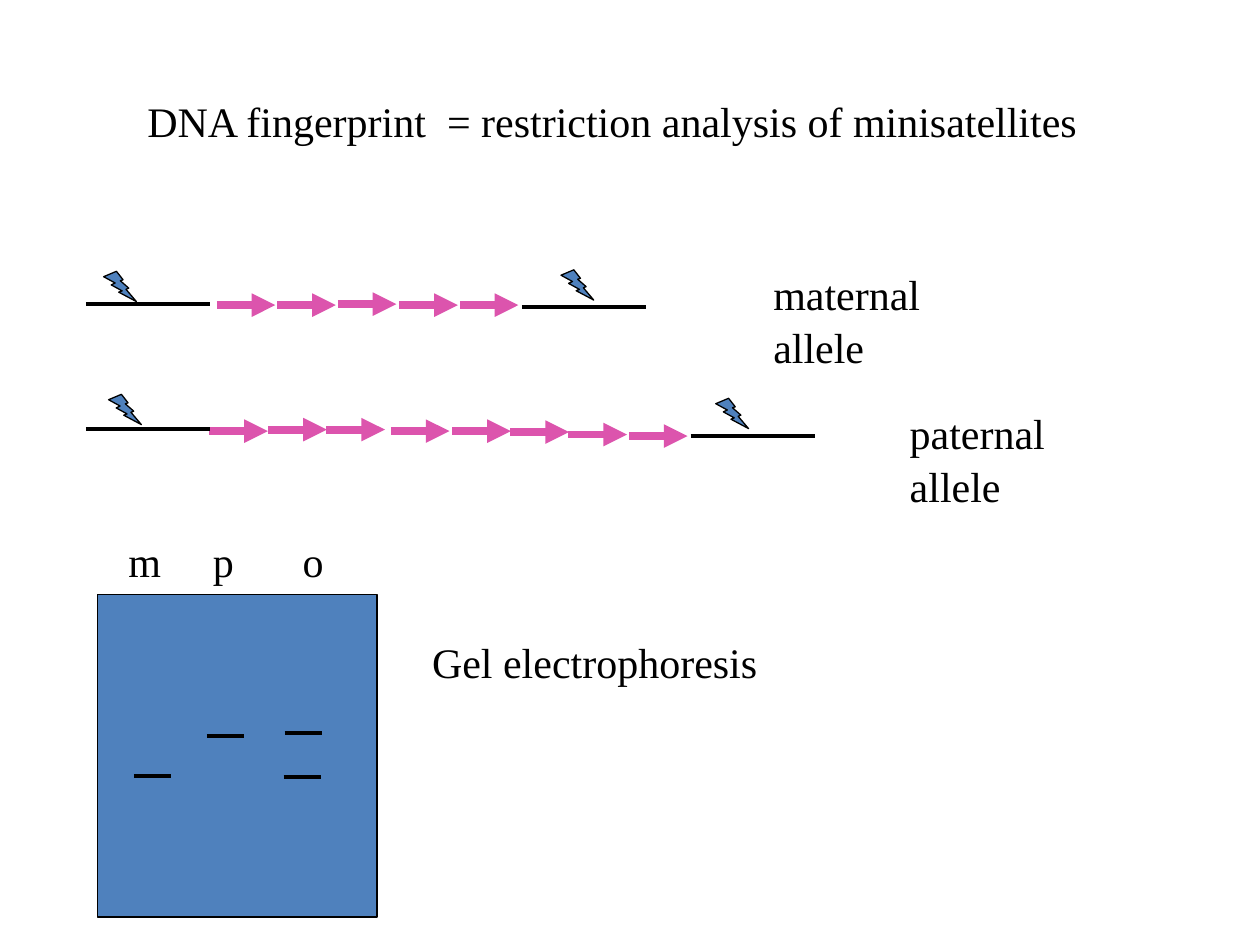
from dataclasses import dataclass

from lxml import etree
from pptx import Presentation
from pptx import util as u
from pptx.dml.color import RGBColor
from pptx.enum import shapes, text
from pptx.oxml.ns import qn


@dataclass(frozen=True)
class Theme:
    """Colours, font, type size and line widths of the slide."""
    ink: RGBColor = RGBColor(0x00, 0x00, 0x00)
    blue: RGBColor = RGBColor(0x4F, 0x81, 0xBD)
    pink: RGBColor = RGBColor(0xDC, 0x54, 0xAD)
    font: str = "Times New Roman"
    size: float = 24
    outline: float = 0.75
    strand: float = 2.25
    arrow: float = 4.5


THEME = Theme()


def add_label(page, words, left, top, width, right_margin=None):
    """Add a text box; a right margin makes its words wrap."""
    box = page.shapes.add_textbox(u.Cm(left), u.Cm(top), u.Cm(width), u.Cm(1.27))
    frame = box.text_frame
    frame.word_wrap = right_margin is not None
    if right_margin is not None:
        frame.margin_right = u.Cm(right_margin)
    frame.vertical_anchor = text.MSO_ANCHOR.TOP
    para = frame.paragraphs[0]
    para.line_spacing = 1.05
    span = para.add_run()
    span.text = words
    span.font.name = THEME.font
    span.font.size = u.Pt(THEME.size)
    span.font.color.rgb = THEME.ink


def add_line(page, left, top, length, color, width):
    """Add a horizontal line without shadow and return it."""
    line = page.shapes.add_connector(
        shapes.MSO_CONNECTOR.STRAIGHT,
        u.Cm(left), u.Cm(top), u.Cm(left + length), u.Cm(top))
    line.line.color.rgb = color
    line.line.width = u.Pt(width)
    etree.SubElement(line._element.spPr, qn("a:effectLst"))
    return line


def add_arrow(page, left, top):
    """Add one minisatellite repeat, an arrow pointing right."""
    arrow = add_line(page, left, top, 1.18, THEME.pink, THEME.arrow)
    etree.SubElement(arrow.line._get_or_add_ln(), qn("a:tailEnd"), type="triangle")


def add_filled(page, kind, left, top, width, height):
    """Add a blue preset shape with a thin black outline."""
    shape = page.shapes.add_shape(
        kind, u.Cm(left), u.Cm(top), u.Cm(width), u.Cm(height))
    shape.shadow.inherit = False
    shape.fill.solid()
    shape.fill.fore_color.rgb = THEME.blue
    shape.line.color.rgb = THEME.ink
    shape.line.width = u.Pt(THEME.outline)


def add_allele(page, left, top, repeats, flanks, cuts, label):
    """Draw an allele: repeats, flanking strands, cutting sites and its name."""
    for x, y in repeats:
        add_arrow(page, left + x, top + y)
    for x, y in flanks:
        add_line(page, left + x, top + y, 2.51, THEME.ink, THEME.strand)
    for x, y in cuts:
        add_filled(page, shapes.MSO_SHAPE.LIGHTNING_BOLT,
                   left + x, top + y, 0.66, 0.61)
    words, x, y, width = label
    add_label(page, words, left + x, top + y, width, right_margin=1.5)


def add_gel(page, left, top, width, height):
    """Draw the gel with its lane letters, bands and caption."""
    add_filled(page, shapes.MSO_SHAPE.RECTANGLE, left, top, width, height)
    lanes = [
        ("m", 0.38, [(0.74, 3.66)]),
        ("p", 2.08, [(2.21, 2.84)]),
        ("o", 3.89, [(3.76, 3.68), (3.78, 2.79)]),
    ]
    for letter, letter_left, bands in lanes:
        add_label(page, letter, left + letter_left, top - 1.37, 0.94)
        for x, y in bands:
            add_line(page, left + x, top + y, 0.75, THEME.ink, THEME.strand)
    add_label(page, "Gel electrophoresis", left + width + 0.86, top + 0.66, 7.06)


def main():
    """Build the slide and save it."""
    deck = Presentation()
    deck.slide_width, deck.slide_height = u.Cm(25.4), u.Cm(19.05)
    page = deck.slides.add_slide(deck.slide_layouts[6])
    add_label(page, "DNA fingerprint  = restriction analysis of minisatellites",
              2.72, 1.75, 19.28)
    add_allele(
        page, 1.73, 5.44,
        repeats=[(2.64, 0.71), (3.86, 0.71), (5.08, 0.69), (6.32, 0.71), (7.54, 0.71)],
        flanks=[(0, 0.69), (8.79, 0.74)],
        cuts=[(0.36, 0.03), (9.58, 0)],
        label=("maternal allele", 13.61, -0.2, 5.51))
    add_allele(
        page, 1.73, 7.95,
        repeats=[(2.49, 0.74), (3.68, 0.71), (4.85, 0.71), (6.15, 0.74),
                 (7.39, 0.74), (8.56, 0.76), (9.73, 0.81), (10.95, 0.84)],
        flanks=[(0, 0.69), (12.19, 0.84)],
        cuts=[(0.46, 0), (12.7, 0.08)],
        label=("paternal allele", 16.36, 0.1, 5.26))
    add_gel(page, 1.96, 11.99, 5.64, 6.5)
    deck.save("out.pptx")


if __name__ == "__main__":
    main()
